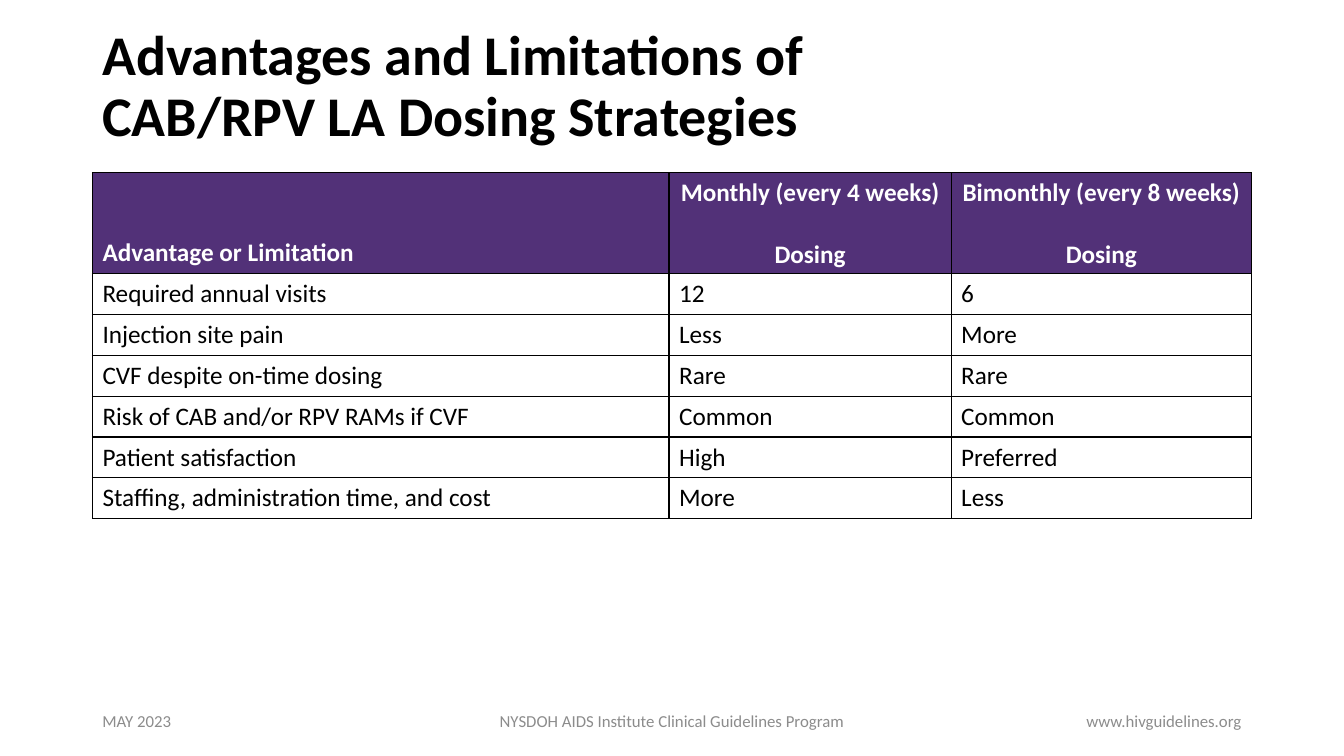
from lxml.etree import SubElement
from pptx import Presentation
from pptx.dml.color import RGBColor
from pptx.enum.text import MSO_ANCHOR as Anchor, PP_ALIGN as Align
from pptx.oxml.ns import qn
from pptx.util import Cm, Pt

BLACK = RGBColor(0x00, 0x00, 0x00)
WHITE = RGBColor(0xFF, 0xFF, 0xFF)
PURPLE = RGBColor(0x52, 0x31, 0x78)
GREY = RGBColor(0x8C, 0x8C, 0x8C)
FONT = "Calibri"

HEADINGS = [
    ["Advantage or Limitation"],
    ["Monthly (every 4 weeks) ", "Dosing"],
    ["Bimonthly (every 8 weeks) ", "Dosing"],
]
COMPARISON = [
    ("Required annual visits", "12", "6"),
    ("Injection site pain", "Less", "More"),
    ("CVF despite on-time dosing", "Rare", "Rare"),
    ("Risk of CAB and/or RPV RAMs if CVF", "Common", "Common"),
    ("Patient satisfaction", "High", "Preferred"),
    ("Staffing, administration time, and cost", "More", "Less"),
]
COLUMN_WIDTHS = [Cm(14.53), Cm(7.11), Cm(7.57)]
HEADING_HEIGHT = Cm(1.76)
ROW_HEIGHT = Cm(1.03)


def write_lines(paragraph, lines, size, color, bold=False, align=Align.LEFT):
    paragraph.alignment = align
    for number, line in enumerate(lines):
        if number:
            paragraph.add_line_break()
        run = paragraph.add_run()
        run.text = line
        run.font.name = FONT
        run.font.size = Pt(size)
        run.font.bold = bold
        run.font.color.rgb = color


def add_label(slide, left, top, width, height, lines, size, color, **style):
    frame = slide.shapes.add_textbox(left, top, width, height).text_frame
    frame.word_wrap = True
    frame.vertical_anchor = Anchor.MIDDLE
    write_lines(frame.paragraphs[0], lines, size, color, **style)
    return frame


def add_title(slide, left, top, width, height):
    title = add_label(
        slide, left, top, width, height,
        ["Advantages and Limitations of ", "CAB/RPV LA Dosing Strategies"],
        40, BLACK, bold=True)
    title.paragraphs[0].line_spacing = 0.9


def add_borders(cell):
    properties = cell._tc.get_or_add_tcPr()
    for position, side in enumerate(("a:lnL", "a:lnR", "a:lnT", "a:lnB")):
        border = SubElement(properties, qn(side), w=str(Pt(1)))
        fill = SubElement(border, qn("a:solidFill"))
        SubElement(fill, qn("a:srgbClr"), val=str(BLACK))
        properties.insert(position, border)


def add_comparison(slide, left, top, width):
    height = HEADING_HEIGHT + ROW_HEIGHT * len(COMPARISON)
    table = slide.shapes.add_table(
        len(COMPARISON) + 1, len(HEADINGS), left, top, width, height).table
    table.horz_banding = False
    for column, column_width in zip(table.columns, COLUMN_WIDTHS):
        column.width = column_width
    for row in table.rows:
        row.height = ROW_HEIGHT
    table.rows[0].height = HEADING_HEIGHT

    for index, heading in enumerate(HEADINGS):
        cell = table.cell(0, index)
        cell.fill.solid()
        cell.fill.fore_color.rgb = PURPLE
        cell.vertical_anchor = Anchor.BOTTOM
        write_lines(cell.text_frame.paragraphs[0], heading, 18, WHITE, bold=True,
                    align=Align.CENTER if index else Align.LEFT)
    for row_index, values in enumerate(COMPARISON, start=1):
        for index, value in enumerate(values):
            cell = table.cell(row_index, index)
            cell.fill.background()
            write_lines(cell.text_frame.paragraphs[0], [value], 18, BLACK)
    for cell in table.iter_cells():
        add_borders(cell)


def add_footer(slide, left, top, width, height):
    side, middle = Cm(7.62), Cm(11.43)
    parts = [
        ("MAY 2023", 0, side, Align.LEFT),
        ("NYSDOH AIDS Institute Clinical Guidelines Program",
         (width - middle) // 2, middle, Align.CENTER),
        ("www.hivguidelines.org", width - side, side, Align.RIGHT),
    ]
    for text, offset, part_width, align in parts:
        add_label(slide, left + offset, top, part_width, height,
                  [text], 12, GREY, align=align)


def main():
    deck = Presentation()
    deck.slide_width, deck.slide_height = Cm(33.87), Cm(19.05)
    slide = deck.slides.add_slide(deck.slide_layouts[6])
    left, width = Cm(2.33), sum(COLUMN_WIDTHS)
    add_title(slide, left, Cm(0.38), Cm(27), Cm(3.68))
    add_comparison(slide, left, Cm(4.35), width)
    add_footer(slide, left, Cm(17.66), width, Cm(1.01))
    deck.save("out.pptx")


if __name__ == "__main__":
    main()
